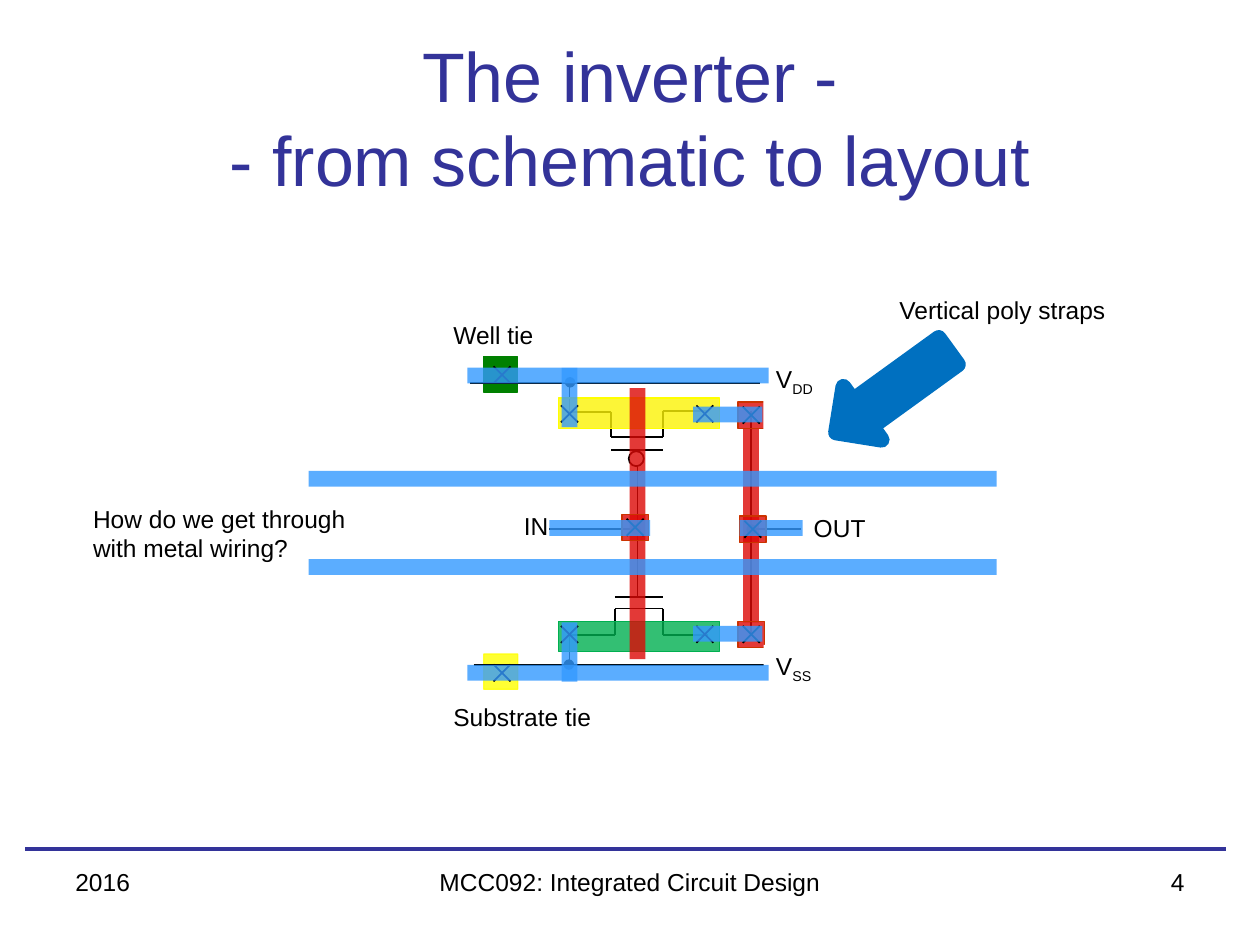
from itertools import pairwise

from pptx import Presentation
from pptx.dml.color import RGBColor
from pptx.enum.shapes import MSO_CONNECTOR, MSO_SHAPE
from pptx.enum.text import MSO_ANCHOR, PP_ALIGN
from pptx.oxml.ns import qn
from pptx.oxml.xmlchemy import OxmlElement
from pptx.util import Pt

COLORS = {
    "title": "333399", "ink": "000000", "paper": "FFFFFF",
    "poly": "DD0806", "contact": "CC3300", "metal": "3399FF",
    "p_diff": "FCF305", "yellow": "FFFF00", "n_diff": "00B050",
    "well": "008000", "arrow": "0070C0",
}
TITLE = ("The inverter -", "- from schematic to layout")
STRAP = 9
CONTACT = 15
CROSS = 9.7

# Columns and rows shared by the schematic and the layout
SOURCE_X, GATE_X, OUT_X, TIE_X = 325.4, 364.3, 429.1, 286.9
P_ROW, IN_ROW, N_ROW = 236.5, 301.7, 362.5
VDD_Y, VSS_Y = 214.6, 384.5

# Schematic: each entry is a chain of points
WIRES = [
    [(324.7, 235.4), (349.2, 235.4), (349.2, 249.8),
     (378.7, 249.8), (378.7, 235), (404.6, 235)],
    [(324.7, 362.9), (351.4, 362.9), (351.4, 347.8),
     (378.7, 347.8), (378.7, 362.9), (404.6, 362.9)],
    [(349.2, 257), (378.7, 257)],
    [(351.4, 341.3), (378.7, 341.3)],
    [(GATE_X, 259.2), (GATE_X, 341.3)],
    [(SOURCE_X, 218.2), (SOURCE_X, 236.2)],
    [(SOURCE_X, 362.9), (SOURCE_X, 380.2)],
    [(OUT_X, 302.4), (457.9, 302.4)],
    [(313.9, 302.4), (363.6, 302.4)],
]
RAIL_WIRES = [[(268.6, 218.9), (434.2, 218.9)], [(270.7, 380.2), (437, 380.2)]]
DOTS = [(429.5, 302.6), (363.2, 302.6), (325.8, 218.5), (325.1, 379.8)]

# Layout: left, top, width, height, fill, line, fill alpha, line alpha
TIES = [
    (276.5, 203.8, 19.4, 20.2, "well", "well", 100, 100),
    (276.5, 373.7, 19.4, 20.2, "yellow", "yellow", 80, 80),
]
DIFFUSIONS = [
    (319, 227.5, 92.2, 17.3, "p_diff", "yellow", 80, 100),
    (319, 355, 92.2, 17.3, "n_diff", "n_diff", 80, 100),
]
CROSSES = [(x, y) for x in (SOURCE_X, 402.8) for y in (P_ROW, N_ROW)]
CROSSES += [(TIE_X, 214.2), (TIE_X, VSS_Y)]
METAL_UNDER = [
    (313.9, IN_ROW, 371.5, IN_ROW),
    (SOURCE_X, 210.2, SOURCE_X, 244.1),
    (SOURCE_X, 355.7, SOURCE_X, 389.5),
]
METAL_TRACKS = [
    (396, 236.9, 435.6, 236.9), (396, 362.2, 435.6, 362.2),
    (176.4, 273.6, 569.5, 273.6), (176.4, 324, 569.5, 324),
]
METAL_TOP = [
    (422.6, IN_ROW, 458.6, IN_ROW),
    (267.1, VDD_Y, 439.2, VDD_Y), (267.1, VSS_Y, 439.2, VSS_Y),
]

# Text: left, top, width, height, text, subscript, alignment
SUPPLIES = [
    (436.3, 204.5, 77, 46.8, "V", "DD", PP_ALIGN.LEFT),
    (436.3, 368.6, 46.8, 28.8, "V", "SS", PP_ALIGN.LEFT),
]
LABELS = [
    (506.9, 164.9, 172.8, 53.3, "Vertical poly straps", "", PP_ALIGN.LEFT),
    (292.3, 288.7, 51.8, 37.4, "IN", "", PP_ALIGN.LEFT),
    (457.9, 289.4, 64.1, 25.9, "OUT", "", PP_ALIGN.LEFT),
    (252, 179.3, 172.8, 27.4, "Well tie", "", PP_ALIGN.LEFT),
    (252, 397.4, 221, 29.5, "Substrate tie", "", PP_ALIGN.LEFT),
    (46.1, 284.4, 172.8, 53.3, "How do we get through with metal wiring?", "",
     PP_ALIGN.LEFT),
    (36, 491.8, 167.8, 37.4, "2016", "", PP_ALIGN.LEFT),
    (229.7, 491.8, 260.6, 37.4, "MCC092: Integrated Circuit Design", "",
     PP_ALIGN.CENTER),
    (516.2, 491.8, 167.8, 37.4, "4", "", PP_ALIGN.RIGHT),
]


def rgb(name):
    return RGBColor.from_string(COLORS[name])


def set_alpha(fill_owner, percent):
    if percent < 100:
        alpha = OxmlElement("a:alpha")
        alpha.set("val", str(percent * 1000))
        fill_owner.find(qn("a:solidFill")).find(qn("a:srgbClr")).append(alpha)


def add_line(x1, y1, x2, y2, color="ink", width=1, alpha=100):
    c = s.shapes.add_connector(MSO_CONNECTOR.STRAIGHT, Pt(x1), Pt(y1), Pt(x2), Pt(y2))
    c.line.color.rgb = rgb(color)
    c.line.width = Pt(width)
    sp_pr = c._element.spPr
    set_alpha(sp_pr.find(qn("a:ln")), alpha)
    sp_pr.append(OxmlElement("a:effectLst"))


def add_chain(points):
    for start, end in pairwise(points):
        add_line(*start, *end)


def add_straps(straps, color):
    for strap in straps:
        add_line(*strap, color, STRAP, 80)


def add_box(x, y, w, h, fill, line=None, alpha=100, line_alpha=100,
            kind=MSO_SHAPE.RECTANGLE, width=0.75):
    sp = s.shapes.add_shape(kind, Pt(x), Pt(y), Pt(w), Pt(h))
    sp.shadow.inherit = False
    sp.fill.solid()
    sp.fill.fore_color.rgb = rgb(fill)
    set_alpha(sp._element.spPr, alpha)
    if line:
        sp.line.color.rgb = rgb(line)
        sp.line.width = Pt(width)
        set_alpha(sp._element.spPr.find(qn("a:ln")), line_alpha)
    else:
        sp.line.fill.background()
    return sp


def add_circle(x, y, d, fill):
    add_box(x - d / 2, y - d / 2, d, d, fill, "ink", kind=MSO_SHAPE.OVAL, width=1)


def add_cross(x, y):
    r = CROSS / 2
    add_line(x + r, y - r, x - r, y + r)
    add_line(x + r, y + r, x - r, y - r)


def add_contact(x, y):
    """Poly contact: a square with a cross, centred on x, y."""
    add_box(x - CONTACT / 2, y - CONTACT / 2, CONTACT, CONTACT, "poly", "contact", 80)
    add_cross(x, y)


def add_run(p, text, size, color="ink"):
    r = p.add_run()
    r.text = text
    r.font.name, r.font.size = "Arial", Pt(size)
    r.font.color.rgb = rgb(color)
    return r


def write(sp, text, subscript, align):
    tf = sp.text_frame
    tf.word_wrap = True
    tf.vertical_anchor = MSO_ANCHOR.TOP
    p = tf.paragraphs[0]
    p.alignment = align
    add_run(p, text, 14)
    if subscript:
        add_run(p, subscript, 14).font._element.set("baseline", "-25000")


prs = Presentation()
prs.slide_width, prs.slide_height = Pt(720), Pt(540)
s = prs.slides.add_slide(prs.slide_layouts[5])

title = s.shapes.title
title.left, title.top, title.width, title.height = Pt(36), Pt(21.6), Pt(648), Pt(90)
title.text_frame.vertical_anchor = MSO_ANCHOR.MIDDLE
p = title.text_frame.paragraphs[0]
p.alignment = PP_ALIGN.CENTER
add_run(p, TITLE[0], 40, "title")
p.add_line_break()
add_run(p, TITLE[1], 40, "title")

add_line(14.4, 485.3, 700.6, 485.3, "title", 2.25)
add_line(OUT_X, 234.7, OUT_X, 362.9)
add_straps([(OUT_X, 244.8, OUT_X, 355.7)], "poly")
for y in (N_ROW, 237.2):
    add_contact(429.3, y)
for wire in WIRES:
    add_chain(wire)
add_circle(363.6, 262.1, 8.6, "paper")
for x, y in DOTS:
    add_circle(x, y, 5, "ink")
for tie in TIES:
    add_box(*tie)
for wire in RAIL_WIRES:
    add_chain(wire)
for x, y, w, h, *content in SUPPLIES:
    write(add_box(x, y, w, h, "paper"), *content)
for diffusion in DIFFUSIONS:
    add_box(*diffusion)
for x, y in CROSSES:
    add_cross(x, y)
add_straps([(GATE_X, 221.8, GATE_X, 376.6)], "poly")
add_contact(362.9, 301.3)
add_straps(METAL_UNDER, "metal")
arrow = add_box(470.2, 205.2, 79.2, 37.4, "arrow", "arrow",
                kind=MSO_SHAPE.RIGHT_ARROW, width=STRAP)
arrow.rotation = 144.1
add_straps(METAL_TRACKS, "metal")
add_contact(430.2, 302.4)
add_straps(METAL_TOP, "metal")
for x, y, w, h, *content in LABELS:
    write(s.shapes.add_textbox(Pt(x), Pt(y), Pt(w), Pt(h)), *content)

prs.save("out.pptx")
